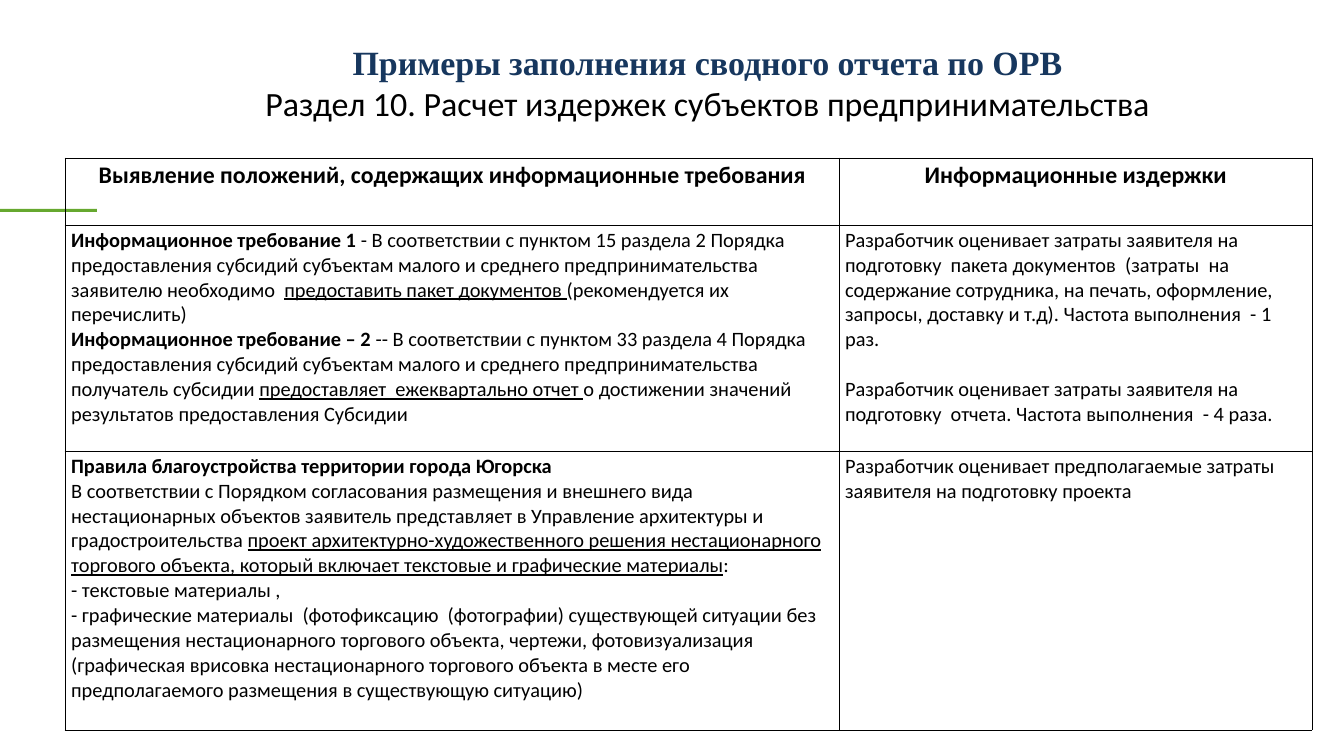
from dataclasses import dataclass

from lxml import etree
from pptx import Presentation, util as u
from pptx.dml.color import RGBColor
from pptx.enum import shapes, text
from pptx.oxml.ns import qn

PX = 14960  # EMU in one px


@dataclass(frozen=True)
class Theme:
    navy: str = "17375E"
    black: str = "000000"
    green: str = "66A82F"
    serif: str = "Times New Roman"
    sans: str = "Calibri"
    title: int = 40
    head: int = 28
    body: int = 24
    border: int = 1


T = Theme()
BODY = dict(name=T.sans, size=u.Pt(T.body), color=T.black, bold=False)
BOLD = BODY | dict(bold=True)
LINK = BODY | dict(underline=True)
HEAD = BOLD | dict(size=u.Pt(T.head))
TITLE = dict(name=T.serif, size=u.Pt(T.title), color=T.navy, bold=True)
SUBTITLE = BODY | dict(size=u.Pt(T.title))

CENTER = dict(alignment=text.PP_ALIGN.CENTER)
LEFT = dict(alignment=text.PP_ALIGN.LEFT)
GAP = LEFT | dict(space_before=u.Pt(29))

# A cell is a list of paragraphs: (paragraph format, [(text, run format), ...])
HEADER = [
    [(CENTER, [("Выявление положений, содержащих информационные требования", HEAD)])],
    [(CENTER, [("Информационные издержки", HEAD)])],
]
SUBSIDIES = [
    [
        (LEFT, [
            ("Информационное требование 1 ", BOLD),
            ("- В соответствии с пунктом 15 раздела 2 Порядка предоставления субсидий "
             "субъектам малого и среднего предпринимательства  заявителю необходимо  ", BODY),
            ("предоставить пакет документов ", LINK),
            ("(рекомендуется их перечислить)", BODY),
        ]),
        (LEFT, [
            ("Информационное требование – 2 ", BOLD),
            ("-- В соответствии с пунктом 33 раздела 4 Порядка предоставления субсидий "
             "субъектам малого и среднего предпринимательства  получатель субсидии ", BODY),
            ("предоставляет  ежеквартально отчет ", LINK),
            ("о достижении значений результатов предоставления Субсидии", BODY),
        ]),
    ],
    [
        (LEFT, [("Разработчик оценивает затраты заявителя на подготовку  пакета документов  "
                 "(затраты  на содержание сотрудника, на печать, оформление, запросы, "
                 "доставку и т.д). Частота выполнения  - 1 раз.", BODY)]),
        (GAP, [("Разработчик оценивает затраты заявителя на подготовку  отчета. "
                "Частота выполнения  - 4 раза.", BODY)]),
    ],
]
LANDSCAPING = [
    [
        (LEFT, [("Правила благоустройства территории города Югорска", BOLD)]),
        (LEFT, [
            ("В соответствии с Порядком согласования размещения и внешнего вида "
             "нестационарных объектов заявитель представляет в Управление архитектуры "
             "и градостроительства ", BODY),
            ("проект архитектурно-художественного решения нестационарного торгового "
             "объекта, который включает текстовые и графические материалы", LINK),
            (":", BODY),
        ]),
        (LEFT, [("- текстовые материалы ,", BODY)]),
        (LEFT, [("- графические материалы  (фотофиксацию  (фотографии) существующей ситуации "
                 "без размещения нестационарного торгового объекта, чертежи, "
                 "фотовизуализация (графическая врисовка нестационарного торгового объекта "
                 "в месте его предполагаемого размещения в существующую ситуацию)", BODY)]),
    ],
    [(LEFT, [("Разработчик оценивает предполагаемые затраты заявителя на подготовку проекта",
              BODY)])],
]


def emu(*px):
    return [u.Emu(v * PX) for v in px]


def write(tf, paragraphs):
    for i, (layout, runs) in enumerate(paragraphs):
        p = tf.add_paragraph() if i else tf.paragraphs[0]
        for key, value in layout.items():
            setattr(p, key, value)
        for words, style in runs:
            r = p.add_run()
            r.text = words
            for key, value in style.items():
                if key == "color":
                    r.font.color.rgb = RGBColor.from_string(value)
                else:
                    setattr(r.font, key, value)


def outline(cell):
    """Draw all four borders and leave the cell unfilled."""
    tc_pr = cell._tc.get_or_add_tcPr()
    for side in ("lnL", "lnR", "lnT", "lnB"):
        ln = etree.SubElement(tc_pr, qn(f"a:{side}"), w=str(u.Pt(T.border)))
        fill = etree.SubElement(ln, qn("a:solidFill"))
        etree.SubElement(fill, qn("a:srgbClr"), val=T.black)
    cell.fill.background()


def add_accent(s, box):
    sp = s.shapes.add_shape(shapes.MSO_SHAPE.RECTANGLE, *emu(*box))
    sp.shadow.inherit = False
    sp.fill.solid()
    sp.fill.fore_color.rgb = RGBColor.from_string(T.green)
    sp.line.fill.background()


def add_title(s, box):
    tf = s.shapes.add_textbox(*emu(*box)).text_frame
    tf.word_wrap = True
    write(tf, [
        (CENTER, [("Примеры заполнения сводного отчета по ОРВ", TITLE)]),
        (CENTER, [("Раздел 10. Расчет издержек субъектов предпринимательства", SUBTITLE)]),
    ])


def add_costs_table(s, box, left_col, heights):
    """Fill the box: the right column takes the width that left_col leaves."""
    rows = [HEADER, SUBSIDIES, LANDSCAPING]
    table = s.shapes.add_table(len(rows), 2, *emu(*box)).table
    for col, width in zip(table.columns, emu(left_col, box[2] - left_col)):
        col.width = width
    for row, height, cells in zip(table.rows, emu(*heights), rows):
        row.height = height
        for cell, paragraphs in zip(row.cells, cells):
            outline(cell)
            write(cell.text_frame, paragraphs)


def main():
    prs = Presentation()
    prs.slide_width, prs.slide_height = emu(1344, 756)
    s = prs.slides.add_slide(prs.slide_layouts[6])
    add_accent(s, (0, 209, 97, 3))
    add_title(s, (237, 39, 941, 89))
    add_costs_table(s, (65, 158, 1247, 572), left_col=774, heights=(67, 226, 279))
    prs.save("out.pptx")


if __name__ == "__main__":
    main()
